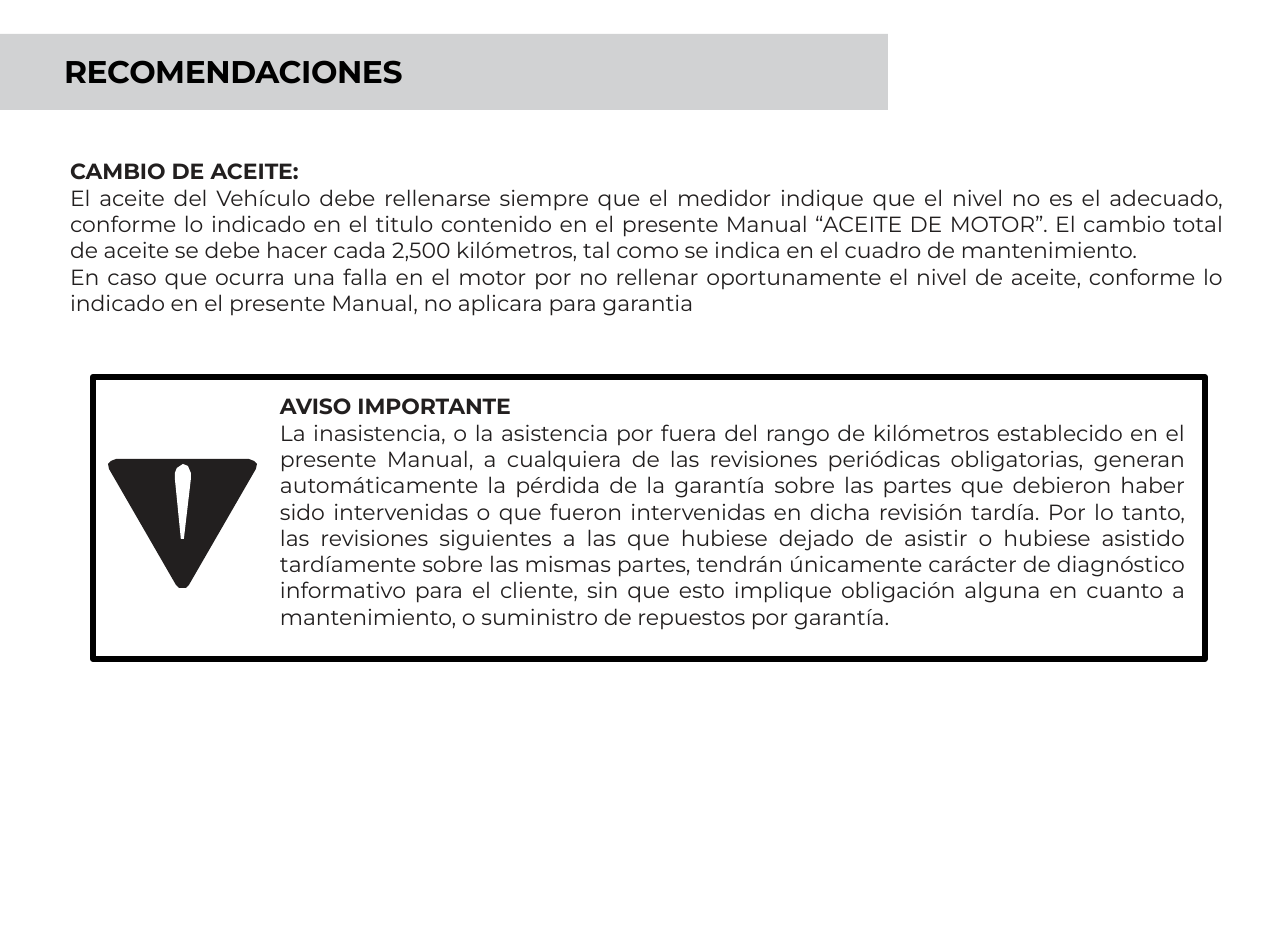
from pptx import Presentation, util as u
from pptx.dml.color import RGBColor
from pptx.enum import shapes, text

PX = 4053
FONT = "Montserrat"
BLACK = RGBColor(0, 0, 0)
INK = RGBColor(0x22, 0x1F, 0x1F)
GREY = RGBColor(0xD1, 0xD2, 0xD3)
WHITE = RGBColor(255, 255, 255)

OIL = [
    ("CAMBIO DE ACEITE:", True),
    ("El aceite del Vehículo debe rellenarse siempre que el medidor indique "
     "que el nivel no es el adecuado, conforme lo indicado en el titulo "
     "contenido en el presente Manual “ACEITE DE MOTOR”. El cambio total de "
     "aceite se debe hacer cada 2,500 kilómetros, tal como se indica en el "
     "cuadro de mantenimiento.", False),
    ("En caso que ocurra una falla en el motor por no rellenar oportunamente "
     "el nivel de aceite, conforme lo indicado en el presente Manual, no "
     "aplicara para garantia", False),
]
NOTICE = [
    ("AVISO IMPORTANTE", True),
    ("La inasistencia, o la asistencia por fuera del rango de kilómetros "
     "establecido en el presente Manual, a cualquiera de las revisiones "
     "periódicas obligatorias, generan automáticamente la pérdida de la "
     "garantía sobre las partes que debieron haber sido intervenidas o que "
     "fueron intervenidas en dicha revisión tardía. Por lo tanto, las "
     "revisiones siguientes a las que hubiese dejado de asistir o hubiese "
     "asistido tardíamente sobre las mismas partes, tendrán únicamente "
     "carácter de diagnóstico informativo para el cliente, sin que esto "
     "implique obligación alguna en cuanto a mantenimiento, o suministro de "
     "repuestos por garantía.", False),
]
EDGE = [(141, 0), (146, 2), (149, 5), (148, 10), (81, 126), (78, 129)]
SIGN = EDGE + [(149 - x, y) for x, y in reversed(EDGE)]
MARK = [(75, 5), (69, 9), (67, 14), (67, 20), (73, 80),
        (76, 80), (83, 20), (83, 14), (80, 7)]


def write(frame, paras, size, color, align, spc=0):
    """Fill a text frame with (words, bold) paragraphs."""
    frame.word_wrap = True
    frame.vertical_anchor = text.MSO_ANCHOR.TOP
    for i, (words, bold) in enumerate(paras):
        para = frame.add_paragraph() if i else frame.paragraphs[0]
        para.alignment = align
        run = para.add_run()
        run.text = words
        font = run.font
        font.name, font.size, font.bold = FONT, u.Pt(size), bold
        font.color.rgb = color
        if spc:
            run._r.get_or_add_rPr().set("spc", str(spc))


def pad(frame, left, top, right):
    """Set the frame margins in px."""
    frame.margin_left, frame.margin_top = left * PX, top * PX
    frame.margin_right, frame.margin_bottom = right * PX, 0


def rect(slide, box):
    """Add a plain rectangle."""
    shape = slide.shapes.add_shape(
        shapes.MSO_SHAPE.RECTANGLE, *[n * PX for n in box])
    shape.shadow.inherit = False
    return shape


def label(slide, box):
    """Add a text box and return its frame."""
    frame = slide.shapes.add_textbox(*[n * PX for n in box]).text_frame
    pad(frame, 2, 2, 0)
    return frame


def outline(slide, x, y, points, color):
    """Draw a closed filled outline placed at x, y."""
    pen = slide.shapes.build_freeform(*points[0], scale=PX)
    pen.add_line_segments(points[1:], close=True)
    shape = pen.convert_to_shape(x * PX, y * PX)
    shape.shadow.inherit = False
    shape.fill.solid()
    shape.fill.fore_color.rgb = color
    shape.line.fill.background()


def header(slide, x, y, w, h):
    """Draw the grey title bar."""
    bar = rect(slide, (x, y, w, h))
    bar.fill.solid()
    bar.fill.fore_color.rgb = GREY
    bar.line.fill.background()
    frame = label(slide, (x + 62, y + 16, w - 62, 43))
    write(frame, [("RECOMENDACIONES", True)], 10, BLACK,
          text.PP_ALIGN.LEFT, -10)


def advice(slide, x, y, w, h):
    """Write the oil change text."""
    frame = label(slide, (x, y, w, h))
    write(frame, OIL, 7, INK, text.PP_ALIGN.JUSTIFY)


def notice(slide, x, y, w, h):
    """Draw the framed notice with its warning sign."""
    box = rect(slide, (x, y, w, h))
    box.fill.background()
    box.line.color.rgb = BLACK
    box.line.width = u.Pt(2)
    pad(box.text_frame, 187, 16, 20)
    write(box.text_frame, NOTICE, 7, INK, text.PP_ALIGN.JUSTIFY)
    outline(slide, x + 15, y + 82, SIGN, INK)
    outline(slide, x + 15, y + 82, MARK, WHITE)


def main():
    """Build the slide."""
    deck = Presentation()
    deck.slide_width, deck.slide_height = 1288 * PX, 934 * PX
    slide = deck.slides.add_slide(deck.slide_layouts[6])
    header(slide, 0, 34, 888, 76)
    advice(slide, 68, 156, 1155, 162)
    notice(slide, 93, 377, 1112, 282)
    deck.save("out.pptx")


if __name__ == "__main__":
    main()
